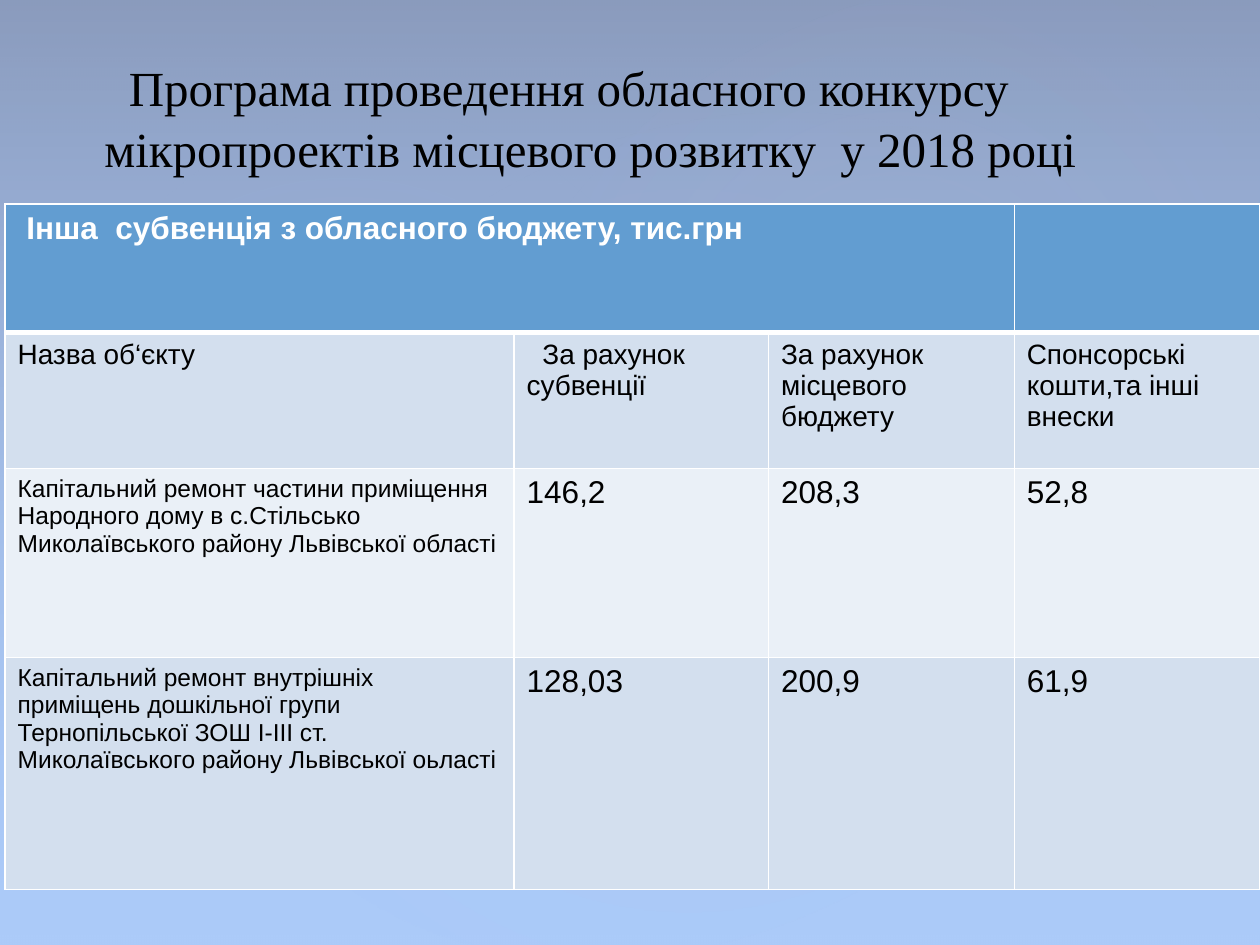
from lxml import etree
from pptx import Presentation
from pptx.dml.color import RGBColor
from pptx.enum.shapes import MSO_SHAPE
from pptx.enum.text import MSO_ANCHOR, MSO_AUTO_SIZE
from pptx.oxml import parse_xml
from pptx.oxml.ns import qn
from pptx.util import Pt

RECT, OVAL = MSO_SHAPE.RECTANGLE, MSO_SHAPE.OVAL
MIDDLE, FIT_TEXT = MSO_ANCHOR.MIDDLE, MSO_AUTO_SIZE.SHAPE_TO_FIT_TEXT
DRAWING_NS = "http://schemas.openxmlformats.org/drawingml/2006/main"
COLORS = {
    "sky": "ACCBF9", "dusk": "504652", "glow": "C4BCC6",
    "header": "629DD1", "band": "D3DFEE", "light": "EAF0F7",
    "white": "FFFFFF", "black": "000000",
}

WIDTH, HEIGHT = 720, 540
TITLE = "Програма проведення обласного конкурсу мікропроектів місцевого розвитку  у 2018 році"
TITLE_BOX = (52.56, 28.8, 635, 74.9)

# left, top, width, height, rotation, opacity at the centre in percent
GLOWS = [
    (108, 82, 570.2, 449.3, 328.7, 7),
    (-21.6, 92.2, 436.3, 352.8, 294.3, 8),
    (257.8, 9.4, 510.5, 374.4, 328.7, 8),
]

HEADING = "Інша  субвенція з обласного бюджету, тис.грн"
COLUMN_NAMES = ["Назва об‘єкту", "За рахунок субвенції",
                "За рахунок місцевого бюджету", "Спонсорські кошти,та інші внески"]
PROJECTS = [
    ["Капітальний ремонт частини приміщення Народного дому в с.Стільсько "
     "Миколаївського району Львівської області", "146,2", "208,3", "52,8"],
    ["Капітальний ремонт внутрішніх приміщень дошкільної групи Тернопільської "
     "ЗОШ І-ІІІ ст. Миколаївського району Львівської оьласті", "128,03", "200,9", "61,9"],
]
TABLE_LEFT, TABLE_TOP = 2.88, 116.64
COLUMN_WIDTHS = [290.9, 145.4, 140.4, 140.4]
ROW_HEIGHTS = [73.4, 77.8, 108, 132.5]
ROW_FILLS = ["header", "band", "light", "band"]


def write(frame, text, size, color="black", bold=False, font="Arial", indent=0, spacing=None):
    paragraph = frame.paragraphs[0]
    paragraph.line_spacing = spacing
    if indent:
        paragraph._p.get_or_add_pPr().set("indent", str(Pt(indent)))
    run = paragraph.add_run()
    run.text = text
    run.font.size, run.font.bold, run.font.name = Pt(size), bold, font
    run.font.color.rgb = RGBColor.from_string(COLORS[color])


def add_haze(slide, kind, box, stops, direction, rotation=0):
    """Add a borderless shape with a gradient of (position, color, opacity) stops."""
    shape = slide.shapes.add_shape(kind, *map(Pt, box))
    shape.rotation = rotation
    shape.shadow.inherit = False
    shape.line.fill.background()
    shape.fill.background()
    stop_xml = "".join(
        f'<a:gs pos="{position * 1000}"><a:srgbClr val="{COLORS[color]}">'
        f'<a:alpha val="{opacity * 1000}"/></a:srgbClr></a:gs>'
        for position, color, opacity in stops)
    gradient = parse_xml(f'<a:gradFill xmlns:a="{DRAWING_NS}" rotWithShape="1">'
                         f'<a:gsLst>{stop_xml}</a:gsLst>{direction}</a:gradFill>')
    properties = shape.element.spPr
    properties.replace(properties.find(qn("a:noFill")), gradient)


def set_borders(cell, top=1, bottom=1):
    properties = cell._tc.get_or_add_tcPr()
    sides = [("lnL", 1), ("lnR", 1), ("lnT", top), ("lnB", bottom)]
    for place, (side, width) in enumerate(sides):
        line = etree.Element(qn(f"a:{side}"), w=str(Pt(width)))
        fill = etree.SubElement(line, qn("a:solidFill"))
        etree.SubElement(fill, qn("a:srgbClr"), val=COLORS["white"])
        properties.insert(place, line)


def add_background(slide):
    slide.background.fill.solid()
    slide.background.fill.fore_color.rgb = RGBColor.from_string(COLORS["sky"])
    add_haze(slide, RECT, (0, 0, WIDTH, HEIGHT), [(0, "dusk", 36), (100, "sky", 10)],
             '<a:lin ang="5400000" scaled="0"/>')
    centre = ('<a:path path="circle"><a:fillToRect l="50000" t="50000" '
              'r="50000" b="50000"/></a:path>')
    for *box, rotation, opacity in GLOWS:
        add_haze(slide, OVAL, box, [(0, "glow", opacity), (58, "sky", 0), (100, "sky", 0)],
                 centre, rotation)


def add_title(slide):
    frame = slide.shapes.add_textbox(*map(Pt, TITLE_BOX)).text_frame
    frame.word_wrap = True
    frame.auto_size = FIT_TEXT
    frame.vertical_anchor = MIDDLE
    write(frame, TITLE, 28, font="Times New Roman", indent=14, spacing=1.05)


def add_budget_table(slide):
    table = slide.shapes.add_table(
        len(ROW_HEIGHTS), len(COLUMN_WIDTHS), Pt(TABLE_LEFT), Pt(TABLE_TOP),
        Pt(sum(COLUMN_WIDTHS)), Pt(sum(ROW_HEIGHTS))).table
    for column, width in zip(table.columns, COLUMN_WIDTHS):
        column.width = Pt(width)
    for number, (row, height) in enumerate(zip(table.rows, ROW_HEIGHTS)):
        row.height = Pt(height)
        for cell in row.cells:
            cell.fill.solid()
            cell.fill.fore_color.rgb = RGBColor.from_string(COLORS[ROW_FILLS[number]])
            set_borders(cell, top=3 if number == 1 else 1, bottom=3 if number == 0 else 1)

    table.cell(0, 0).merge(table.cell(0, 2))
    write(table.cell(0, 0).text_frame, HEADING, 18, color="white", bold=True, indent=5)
    for column, name in enumerate(COLUMN_NAMES):
        write(table.cell(1, column).text_frame, name, 16, indent=9 if column == 1 else 0)
    for number, project in enumerate(PROJECTS, start=2):
        for column, entry in enumerate(project):
            write(table.cell(number, column).text_frame, entry, 18 if column else 14)


def main():
    presentation = Presentation()
    presentation.slide_width, presentation.slide_height = Pt(WIDTH), Pt(HEIGHT)
    slide = presentation.slides.add_slide(presentation.slide_layouts[6])
    add_background(slide)
    add_title(slide)
    add_budget_table(slide)
    presentation.save("out.pptx")


if __name__ == "__main__":
    main()
